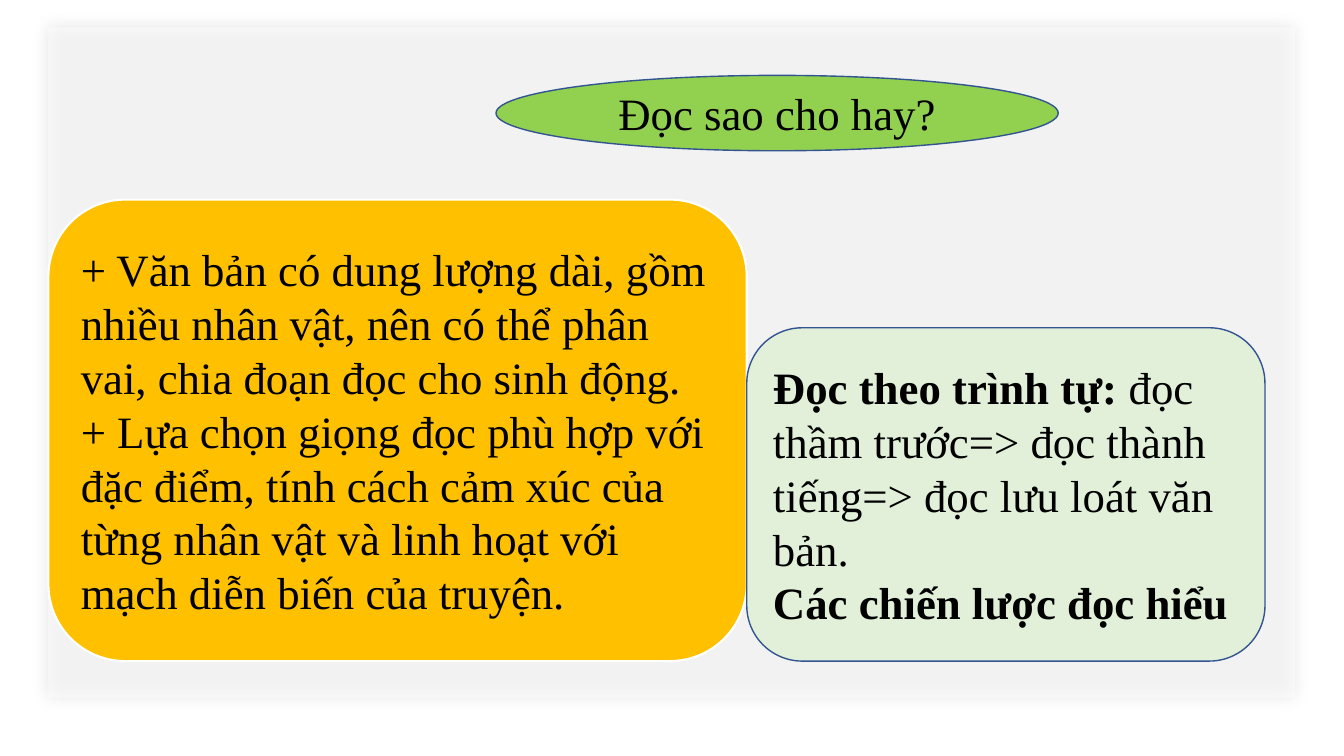
from lxml import etree
from pptx import Presentation, util as u
from pptx.dml.color import RGBColor
from pptx.enum import shapes, text
from pptx.oxml import parse_xml
from pptx.oxml.ns import nsdecls, qn

COLORS = {"white": "FFFFFF", "black": "000000", "lime": "92D050",
          "amber": "FFC000", "mint": "E2F0D9", "navy": "325491"}
FONT = "Times New Roman"
FONT_SIZE = 32
LINE_PITCH = 38.4
SLIDE_SIZE = (33.87, 19.05)
PANEL = (1.22, 0.69, 31.42, 16.89)
OVAL, ROUNDED = shapes.MSO_SHAPE.OVAL, shapes.MSO_SHAPE.ROUNDED_RECTANGLE
LEFT, CENTER = text.PP_ALIGN.LEFT, text.PP_ALIGN.CENTER

QUESTION = [[("Đọc sao cho hay?", False)]]
READING_TIPS = [
    [("+ Văn bản có dung lượng dài, gồm nhiều nhân vật, nên có thể phân vai, "
      "chia đoạn đọc cho sinh động.", False)],
    [("+ Lựa chọn giọng đọc phù hợp với đặc điểm, tính cách cảm xúc của từng "
      "nhân vật và linh hoạt với mạch diễn biến của truyện.", False)],
]
READING_ORDER = [
    [("Đọc theo trình tự:", True),
     (" đọc thầm trước=> đọc thành tiếng=> đọc lưu loát văn bản.", False)],
    [("Các chiến lược đọc hiểu", True)],
]
CARDS = [
    (OVAL, (12.5, 1.9, 14.17, 1.9), "lime", "navy", 1, CENTER, QUESTION),
    (ROUNDED, (1.22, 5.03, 17.6, 11.63), "amber", "white", 1.5, LEFT, READING_TIPS),
    (ROUNDED, (18.82, 8.26, 13.06, 8.4), "mint", "navy", 1, LEFT, READING_ORDER),
]


def color(name):
    return RGBColor.from_string(COLORS[name])


def add_filled_shape(slide, kind, box, fill):
    shape = slide.shapes.add_shape(kind, *(u.Cm(length) for length in box))
    shape.shadow.inherit = False
    shape.fill.solid()
    shape.fill.fore_color.rgb = color(fill)
    return shape


def add_panel(slide):
    panel = add_filled_shape(slide, shapes.MSO_SHAPE.RECTANGLE, PANEL, "white")
    panel.line.fill.background()
    properties = panel.fill._xPr
    fill_color = properties.find(qn("a:solidFill")).find(qn("a:srgbClr"))
    etree.SubElement(fill_color, qn("a:alpha")).set("val", "48000")
    properties.find(qn("a:effectLst")).append(parse_xml(
        f'<a:outerShdw {nsdecls("a")} blurRad="{u.Pt(11)}" dist="0" dir="0" '
        f'algn="ctr" rotWithShape="0"><a:srgbClr val="{COLORS["black"]}">'
        '<a:alpha val="20000"/></a:srgbClr></a:outerShdw>'))


def add_card(slide, kind, box, fill, outline, width, alignment, paragraphs):
    card = add_filled_shape(slide, kind, box, fill)
    card.line.color.rgb = color(outline)
    card.line.width = u.Pt(width)
    frame = card.text_frame
    frame.word_wrap = True
    frame.vertical_anchor = text.MSO_ANCHOR.MIDDLE
    for index, runs in enumerate(paragraphs):
        paragraph = frame.add_paragraph() if index else frame.paragraphs[0]
        paragraph.alignment = alignment
        if len(paragraphs) > 1:
            paragraph.line_spacing = u.Pt(LINE_PITCH)
        for words, bold in runs:
            run = paragraph.add_run()
            run.text = words
            run.font.name = FONT
            run.font.size = u.Pt(FONT_SIZE)
            run.font.bold = bold
            run.font.color.rgb = color("black")


def main():
    presentation = Presentation()
    presentation.slide_width, presentation.slide_height = map(u.Cm, SLIDE_SIZE)
    slide = presentation.slides.add_slide(presentation.slide_layouts[6])
    add_panel(slide)
    for card in CARDS:
        add_card(slide, *card)
    presentation.save("out.pptx")


if __name__ == "__main__":
    main()
